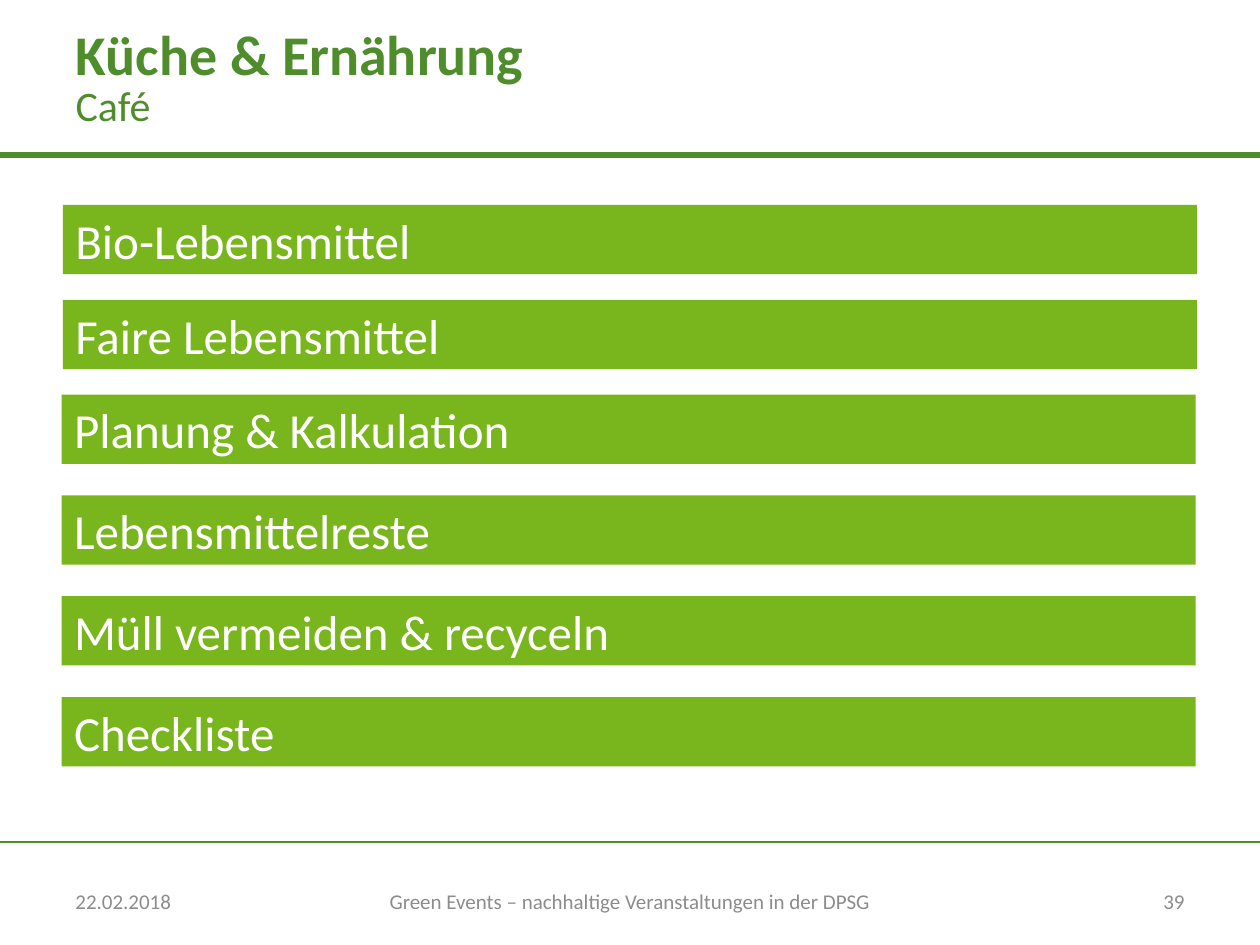
from lxml import etree
from pptx import Presentation
from pptx.dml.color import RGBColor
from pptx.enum import shapes, text
from pptx.oxml.ns import qn
from pptx.util import Pt

COLORS = {"dark": "4F8D2C", "bar": "79B51C", "white": "FFFFFF", "grey": "8C8C8C"}
FONT = "Calibri"
LEFT, CENTER, RIGHT = text.PP_ALIGN.LEFT, text.PP_ALIGN.CENTER, text.PP_ALIGN.RIGHT

BAR_LEFT, BAR_WIDTH, BAR_HEIGHT = 36, 648, 39.6
# left, first top, step, labels
BAR_GROUPS = [
    (BAR_LEFT, 117, 54.4, ["Bio-Lebensmittel", "Faire Lebensmittel"]),
    (35.3, 225.5, 57.6, ["Planung & Kalkulation", "Lebensmittelreste",
                         "Müll vermeiden & recyceln", "Checkliste"]),
]
FOOTERS = [
    (36, 168, "22.02.2018", LEFT),
    (215.3, 289.4, "Green Events – nachhaltige Veranstaltungen in der DPSG", CENTER),
    (516, 168, "39", RIGHT),
]


def rgb(name):
    return RGBColor.from_string(COLORS[name])


def write(sp, content, size, color, bold=False, align=LEFT):
    """Put one formatted, vertically centred line of text into a shape."""
    tf = sp.text_frame
    tf.word_wrap = True
    tf.auto_size = text.MSO_AUTO_SIZE.NONE
    tf.vertical_anchor = text.MSO_ANCHOR.MIDDLE
    p = tf.paragraphs[0]
    p.alignment = align
    p.space_before = Pt(0)
    r = p.add_run()
    r.text = content
    f = r.font
    f.name, f.size, f.bold = FONT, Pt(size), bold
    f.color.rgb = rgb(color)


def place(sp, left, top, width, height):
    sp.left, sp.top, sp.width, sp.height = map(Pt, (left, top, width, height))


def remove_bullet(sp):
    pPr = sp.text_frame.paragraphs[0]._p.get_or_add_pPr()
    pPr.set("marL", "0")
    pPr.set("indent", "0")
    etree.SubElement(pPr, qn("a:buNone"))


def add_rule(s, y, length, weight):
    line = s.shapes.add_connector(shapes.MSO_CONNECTOR.STRAIGHT,
                                  Pt(0), Pt(y), Pt(length), Pt(y))
    line.line.color.rgb = rgb("dark")
    line.line.width = Pt(weight)
    etree.SubElement(line._element.spPr, qn("a:effectLst"))


def add_heading(s):
    title, subtitle = s.shapes.title, s.placeholders[1]
    place(title, 36, 0.7, 480, 59)
    write(title, "Küche & Ernährung", 32, "dark", bold=True)
    place(subtitle, 36, 43.2, 480, 33.8)
    remove_bullet(subtitle)
    write(subtitle, "Café", 24, "dark")


def add_bar(s, left, top, label):
    bar = s.shapes.add_shape(shapes.MSO_SHAPE.RECTANGLE, Pt(left), Pt(top),
                             Pt(BAR_WIDTH), Pt(BAR_HEIGHT))
    bar.shadow.inherit = False
    bar.fill.solid()
    bar.fill.fore_color.rgb = rgb("bar")
    bar.line.fill.background()
    write(bar, label, 28, "white")


def add_footer(s, left, width, content, align):
    box = s.shapes.add_textbox(Pt(left), Pt(500.5), Pt(width), Pt(28.8))
    write(box, content, 12, "grey", align=align)


def main():
    prs = Presentation()
    prs.slide_width, prs.slide_height = Pt(720), Pt(540)
    s = prs.slides.add_slide(prs.slide_layouts[1])
    add_rule(s, 481.2, 720, 0.75)
    add_rule(s, 88.6, 720, 3)
    add_heading(s)
    for left, top, step, labels in BAR_GROUPS:
        for i, label in enumerate(labels):
            add_bar(s, left, top + i * step, label)
    for footer in FOOTERS:
        add_footer(s, *footer)
    prs.save("out.pptx")


if __name__ == "__main__":
    main()
